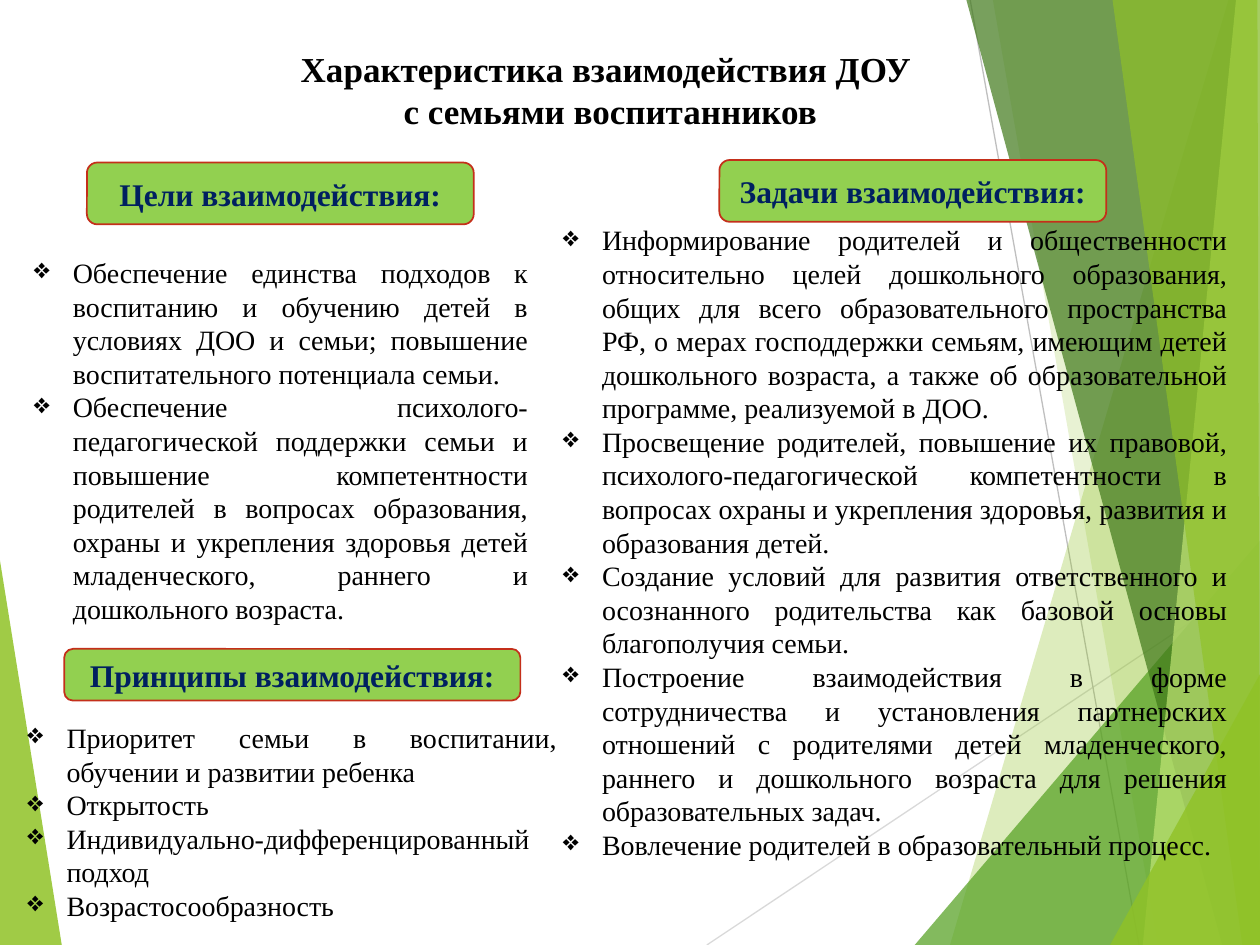
from lxml import etree
from pptx import Presentation
from pptx.dml.color import RGBColor
from pptx.enum.shapes import MSO_CONNECTOR, MSO_SHAPE
from pptx.enum.text import MSO_ANCHOR, PP_ALIGN
from pptx.oxml.ns import qn
from pptx.util import Inches, Pt

FONT = "Times New Roman"
BLACK = RGBColor(0x00, 0x00, 0x00)
NAVY = RGBColor(0x00, 0x20, 0x60)
LABEL_GREEN = RGBColor(0x92, 0xD0, 0x50)
RED = RGBColor(0xC4, 0x2F, 0x1A)
LIME = RGBColor(0x90, 0xC2, 0x26)
GREEN = RGBColor(0x54, 0xA0, 0x21)
DARK_GREEN = RGBColor(0x3F, 0x78, 0x19)
PALE_LIME = RGBColor(0xC0, 0xE4, 0x74)
LIGHT_GRAY = RGBColor(0xD9, 0xD9, 0xD9)
GRAY = RGBColor(0xBF, 0xBF, 0xBF)

# Start, end, colour
RAYS = [
    ((5.61, 7.5), (10, 4.57), LIGHT_GRAY),
    ((7.7, 0), (9.04, 7.5), GRAY),
]
# Corner points, colour, opacity in percent
LEFT_FACET = ([(0, 4.45), (0.49, 7.5), (0, 7.5)], LIME, 85)
RIGHT_FACETS = [
    ([(9.75, 0), (7.54, 7.5), (10, 7.5), (10, 0)], LIME, 30),
    ([(7.88, 0), (9.19, 7.5), (10, 7.5), (10, 0)], LIME, 20),
    ([(7.26, 7.5), (10, 4.29), (10, 7.5)], GREEN, 72),
    ([(7.67, 0), (9.7, 7.5), (10, 7.5), (10, 0)], DARK_GREEN, 70),
    ([(9.81, 0), (9.07, 7.5), (10, 7.5), (10, 0)], PALE_LIME, 70),
    ([(8.83, 0), (9.86, 7.5), (10, 7.5), (9.98, 0)], LIME, 65),
    ([(8.81, 7.5), (10, 5.35), (10, 7.5)], LIME, 80),
]

TITLE = ["Характеристика взаимодействия ДОУ ", "с семьями воспитанников"]
GOALS = [
    "Обеспечение единства подходов к воспитанию и обучению детей в условиях ДОО и семьи; "
    "повышение воспитательного потенциала семьи.",
    "Обеспечение психолого-педагогической поддержки семьи и повышение компетентности "
    "родителей в вопросах образования, охраны и укрепления здоровья детей младенческого, "
    "раннего и дошкольного возраста.",
]
PRINCIPLES = [
    "Приоритет семьи в воспитании, обучении и развитии ребенка",
    "Открытость",
    "Индивидуально-дифференцированный подход",
    "Возрастосообразность",
]
TASKS = [
    "Информирование родителей и общественности относительно целей дошкольного образования, "
    "общих для всего образовательного пространства РФ, о мерах господдержки семьям, имеющим "
    "детей дошкольного возраста, а также об образовательной программе, реализуемой в ДОО.",
    "Просвещение родителей, повышение их правовой, психолого-педагогической компетентности "
    "в вопросах охраны и укрепления здоровья, развития и образования детей.",
    "Создание условий для развития ответственного и осознанного родительства как базовой "
    "основы благополучия семьи.",
    "Построение взаимодействия в форме сотрудничества и установления партнерских отношений "
    "с родителями детей младенческого, раннего и дошкольного возраста для решения "
    "образовательных задач.",
    "Вовлечение родителей в образовательный процесс.",
]


def inches(values):
    return [Inches(value) for value in values]


def add_facet(slide, points, color, opacity):
    """Draw a translucent polygon without an outline."""
    corners = [inches(point) for point in points]
    builder = slide.shapes.build_freeform(*corners[0])
    builder.add_line_segments(corners[1:], close=True)
    shape = builder.convert_to_shape()
    shape.shadow.inherit = False
    shape.line.fill.background()
    shape.fill.solid()
    shape.fill.fore_color.rgb = color
    color_element = shape.fill._xPr.find(qn("a:solidFill"))[0]
    etree.SubElement(color_element, qn("a:alpha"), val=str(opacity * 1000))


def add_ray(slide, start, end, color):
    ray = slide.shapes.add_connector(MSO_CONNECTOR.STRAIGHT, *inches(start + end))
    ray.line.color.rgb = color
    ray.line.width = Pt(0.75)
    etree.SubElement(ray._element.spPr, qn("a:effectLst"))


def add_backdrop(slide):
    add_facet(slide, *LEFT_FACET)
    for ray in RAYS:
        add_ray(slide, *ray)
    for facet in RIGHT_FACETS:
        add_facet(slide, *facet)


def write_paragraphs(text_frame, texts, size, color, alignment, bold=False):
    text_frame.word_wrap = True
    text_frame.text = "\n".join(texts)
    for paragraph in text_frame.paragraphs:
        paragraph.alignment = alignment
        for run in paragraph.runs:
            run.font.name = FONT
            run.font.size = Pt(size)
            run.font.bold = bold
            run.font.color.rgb = color


def add_title(slide, box):
    shape = slide.shapes.add_textbox(*inches(box))
    write_paragraphs(shape.text_frame, TITLE, 20, BLACK, PP_ALIGN.CENTER, bold=True)


def add_label(slide, box, text):
    shape = slide.shapes.add_shape(MSO_SHAPE.ROUNDED_RECTANGLE, *inches(box))
    shape.shadow.inherit = False
    shape.fill.solid()
    shape.fill.fore_color.rgb = LABEL_GREEN
    shape.line.color.rgb = RED
    shape.line.width = Pt(1)
    shape.text_frame.vertical_anchor = MSO_ANCHOR.MIDDLE
    write_paragraphs(shape.text_frame, [text], 18, NAVY, PP_ALIGN.CENTER, bold=True)


def add_bullets(slide, box, items):
    shape = slide.shapes.add_textbox(*inches(box))
    write_paragraphs(shape.text_frame, items, 16, BLACK, PP_ALIGN.JUSTIFY)
    indent = Inches(0.31)
    for paragraph in shape.text_frame.paragraphs:
        properties = paragraph._p.get_or_add_pPr()
        properties.set("marL", str(indent))
        properties.set("indent", str(-indent))
        etree.SubElement(properties, qn("a:buChar"), char="❖")


def main():
    presentation = Presentation()
    presentation.slide_width = Inches(10)
    presentation.slide_height = Inches(7.5)
    slide = presentation.slides.add_slide(presentation.slide_layouts[6])
    add_backdrop(slide)
    add_title(slide, (0.91, 0.33, 7.87, 0.77))
    add_label(slide, (0.69, 1.29, 3.07, 0.49), "Цели взаимодействия:")
    add_label(slide, (5.71, 1.27, 3.07, 0.49), "Задачи взаимодействия:")
    add_label(slide, (0.51, 5.15, 3.62, 0.41), "Принципы взаимодействия:")
    add_bullets(slide, (0.12, 5.67, 4.4, 1.72), PRINCIPLES)
    add_bullets(slide, (0.17, 1.98, 4.12, 3.06), GOALS)
    add_bullets(slide, (4.37, 1.72, 5.47, 5.22), TASKS)
    presentation.save("out.pptx")


if __name__ == "__main__":
    main()
